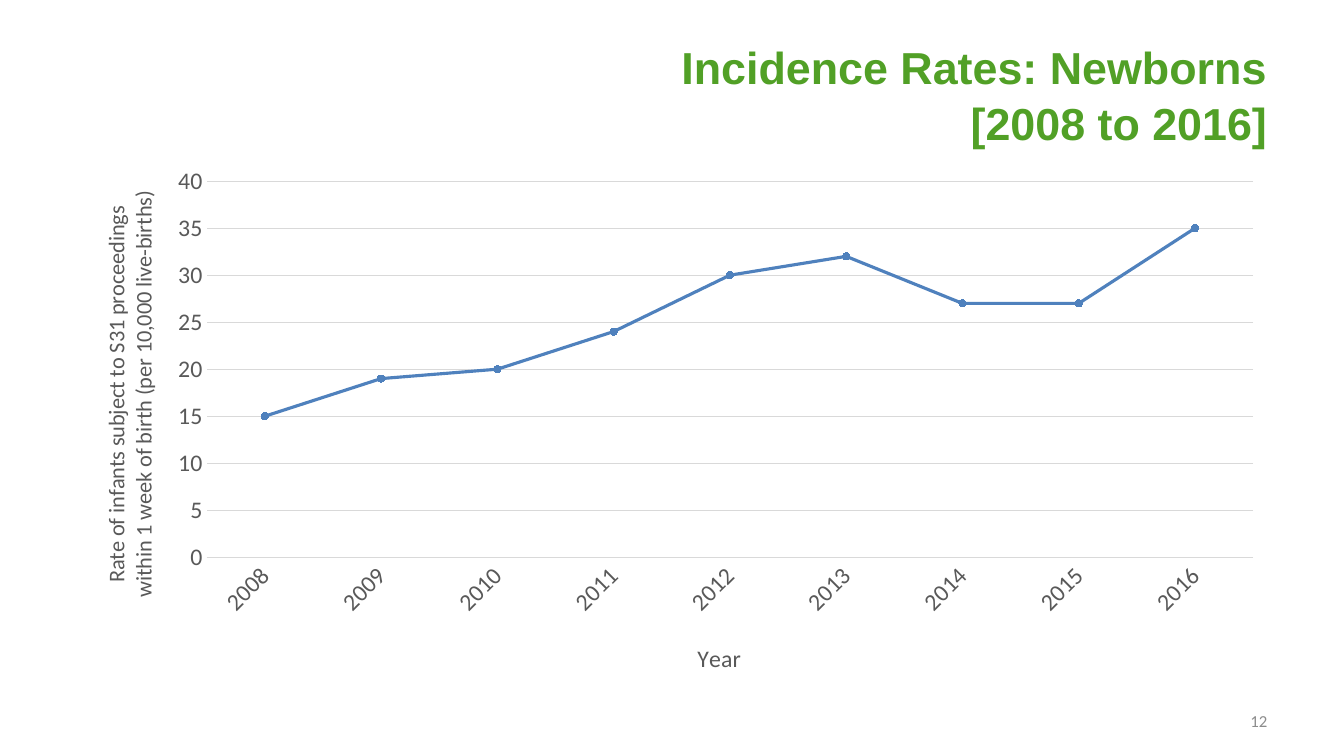
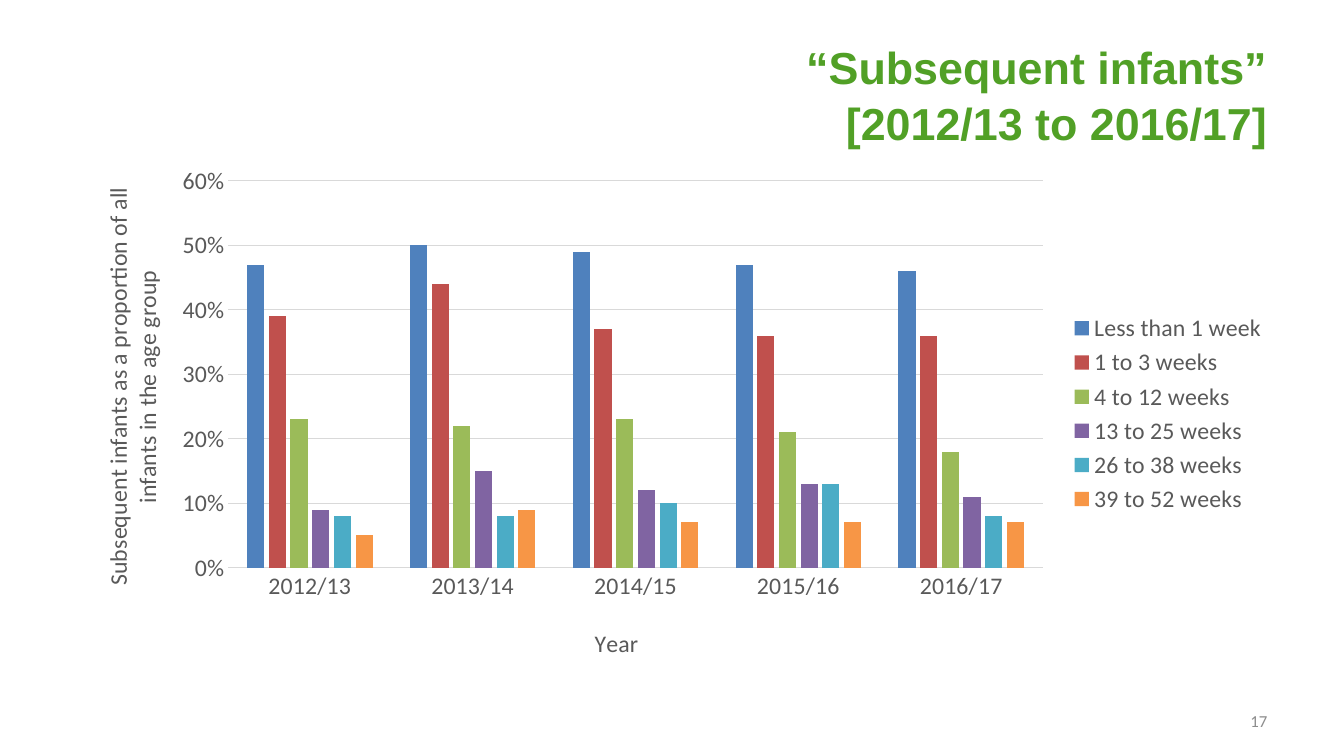
from pptx import Presentation
from pptx.chart.data import CategoryChartData as ChartData
from pptx.dml.color import RGBColor
from pptx.enum.chart import XL_CHART_TYPE as Kind
from pptx.enum.chart import XL_LEGEND_POSITION as Legend
from pptx.enum.chart import XL_MARKER_STYLE as Marker
from pptx.enum.chart import XL_TICK_MARK as Tick
from pptx.enum.text import MSO_ANCHOR as Anchor
from pptx.enum.text import MSO_AUTO_SIZE as Fit
from pptx.enum.text import PP_ALIGN as Align
from pptx.oxml import parse_xml
from pptx.oxml.ns import nsdecls, qn
from pptx.util import Inches, Pt

GREEN, GREY, TEXT, RULE = "51A026", "8C8C8C", "595959", "D9D9D9"
COLOURS = ["4F81BD", "C0504D", "9BBB59", "8064A2", "4BACC6", "F79646"]
HEAD, BODY = "Arial", "Calibri"
TITLE_BOX = (0.67, 0.3, 12, 1.25)
PAGE_BOX = (9.56, 6.95, 3.11, 0.4)


def rgb(code):
    return RGBColor.from_string(code)


def style(font, size, colour, face=BODY, bold=False):
    font.size, font.name, font.bold = Pt(size), face, bold
    font.color.rgb = rgb(colour)


def write(frame, lines, *look):
    """Right-aligned paragraph, its lines parted by breaks."""
    frame.word_wrap, frame.auto_size = True, Fit.NONE
    frame.vertical_anchor = Anchor.MIDDLE
    para = frame.paragraphs[0]
    para.alignment = Align.RIGHT
    for i, line in enumerate(lines):
        if i:
            para.add_line_break()
        run = para.add_run()
        run.text = line
        style(run.font, *look)
    return para


def add_page(deck, title, number):
    """Slide with its title and page number."""
    slide = deck.slides.add_slide(deck.slide_layouts[5])
    head = slide.shapes.title
    head.left, head.top, head.width, head.height = map(Inches, TITLE_BOX)
    para = write(head.text_frame, title, 32, GREEN, HEAD, True)
    para.line_spacing = 1.05
    foot = slide.shapes.add_textbox(*map(Inches, PAGE_BOX))
    write(foot.text_frame, [number], 12, GREY)
    return slide


def place(node, index, x, y, w=None, h=None):
    """Fix a chart part at fractions of the chart's size."""
    for old in node.findall(qn("c:layout")):
        node.remove(old)
    parts = [("xMode", "edge"), ("yMode", "edge"), ("x", x), ("y", y)]
    if w:
        parts.insert(0, ("layoutTarget", "inner"))
        parts += [("w", w), ("h", h)]
    inner = "".join(f'<c:{tag} val="{val}"/>' for tag, val in parts)
    node.insert(index, parse_xml(
        f'<c:layout {nsdecls("c")}><c:manualLayout>{inner}'
        '</c:manualLayout></c:layout>'))


def name_axis(axis, text, size, spot, turn=0):
    frame = axis.axis_title.text_frame
    run = frame.paragraphs[0].add_run()
    run.text = text
    style(run.font, size, TEXT)
    body = frame._txBody.bodyPr
    body.set("rot", str(turn * 60000))
    body.set("vert", "horz")
    place(axis.axis_title._element, 1, *spot)


def add_chart(slide, box, kind, cats, rows, plot, top, step, form):
    """Chart with the shared axis style."""
    data = ChartData(number_format=form)
    data.categories = cats
    for name, vals in rows:
        data.add_series(name, vals)
    chart = slide.shapes.add_chart(kind, *map(Inches, box), data).chart
    chart.has_title = chart.has_legend = False
    style(chart.font, 17, TEXT)
    place(chart._chartSpace.chart.plotArea, 0, *plot)
    chart.plots[0].vary_by_categories = False

    # Axes
    years, scale = chart.category_axis, chart.value_axis
    for axis in (years, scale):
        axis.major_tick_mark = axis.minor_tick_mark = Tick.NONE
        style(axis.tick_labels.font, 17, TEXT)
    scale.minimum_scale, scale.maximum_scale = 0, top
    scale.major_unit = step
    scale.tick_labels.number_format = form
    scale.tick_labels.number_format_is_linked = False
    scale.format.line.fill.background()
    scale.has_major_gridlines = True
    for line in (years.format.line, scale.major_gridlines.format.line):
        line.color.rgb, line.width = rgb(RULE), Pt(0.75)
    return chart


def add_rates(slide, box):
    """Line chart of yearly rates."""
    rows = [("Series 1", [15, 19, 20, 24, 30, 32, 27, 27, 35])]
    cats = [str(year) for year in range(2008, 2017)]
    chart = add_chart(slide, box, Kind.LINE_MARKERS, cats, rows,
                      (0.115, 0.047, 0.865, 0.708), 40, 5, "0")
    name_axis(chart.category_axis, "Year", 17, (0.517, 0.905))
    name_axis(chart.value_axis, "Rate of infants subject to S31 proceedings "
              "within 1 week of birth (per 10,000 live-births)",
              16, (0.024, 0.058), -90)
    labels = chart.category_axis._element.find(qn("c:txPr"))
    labels.find(qn("a:bodyPr")).set("rot", str(-45 * 60000))

    # Line and markers
    rate = chart.plots[0].series[0]
    rate.smooth = False
    blue = rgb(COLOURS[0])
    rate.format.line.color.rgb, rate.format.line.width = blue, Pt(2.25)
    rate.marker.style, rate.marker.size = Marker.CIRCLE, 5
    rate.marker.format.fill.solid()
    rate.marker.format.fill.fore_color.rgb = blue
    rate.marker.format.line.color.rgb = blue


def add_shares(slide, box):
    """Column chart of shares by age group."""
    rows = [
        ("Less than 1 week", [0.47, 0.5, 0.49, 0.47, 0.46]),
        ("1 to 3 weeks", [0.39, 0.44, 0.37, 0.36, 0.36]),
        ("4 to 12 weeks", [0.23, 0.22, 0.23, 0.21, 0.18]),
        ("13 to 25 weeks", [0.09, 0.15, 0.12, 0.13, 0.11]),
        ("26 to 38 weeks", [0.08, 0.08, 0.1, 0.13, 0.08]),
        ("39 to 52 weeks", [0.05, 0.09, 0.07, 0.07, 0.07]),
    ]
    cats = [f"{year}/{year - 1999}" for year in range(2012, 2017)]
    chart = add_chart(slide, box, Kind.COLUMN_CLUSTERED, cats, rows,
                      (0.133, 0.048, 0.673, 0.751), 0.6, 0.1, "0%")
    name_axis(chart.category_axis, "Year", 17, (0.432, 0.905))
    name_axis(chart.value_axis, "Subsequent infants as a proportion of all "
              "infants in the age group", 17, (0.024, 0.053), -90)

    # Columns and legend
    bars = chart.plots[0]
    bars.gap_width, bars.overlap = 219, -27
    for group, colour in zip(bars.series, COLOURS):
        group.format.fill.solid()
        group.format.fill.fore_color.rgb = rgb(colour)
    chart.has_legend = True
    chart.legend.position = Legend.RIGHT
    chart.legend.include_in_layout = False
    style(chart.legend.font, 17, TEXT)


def main():
    deck = Presentation()
    deck.slide_width, deck.slide_height = Inches(13.33), Inches(7.5)
    rates = add_page(
        deck, ["Incidence Rates: Newborns", "[2008 to 2016]"], "12")
    add_rates(rates, (0.67, 1.55, 12, 5.27))
    shares = add_page(
        deck, ["“Subsequent infants”", "[2012/13 to 2016/17]"], "17")
    add_shares(shares, (0.67, 1.55, 12, 5.11))
    deck.save("out.pptx")


if __name__ == "__main__":
    main()
